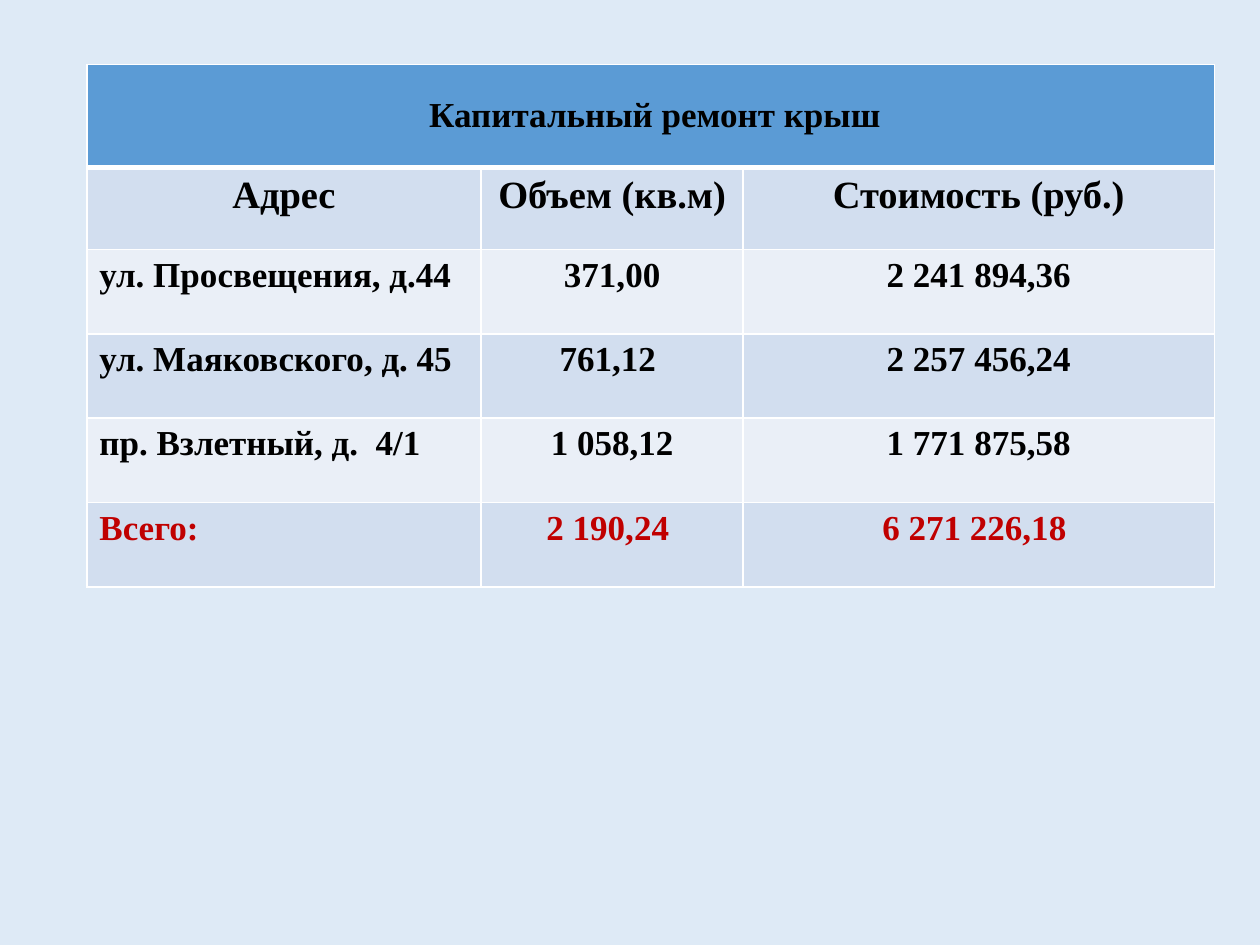
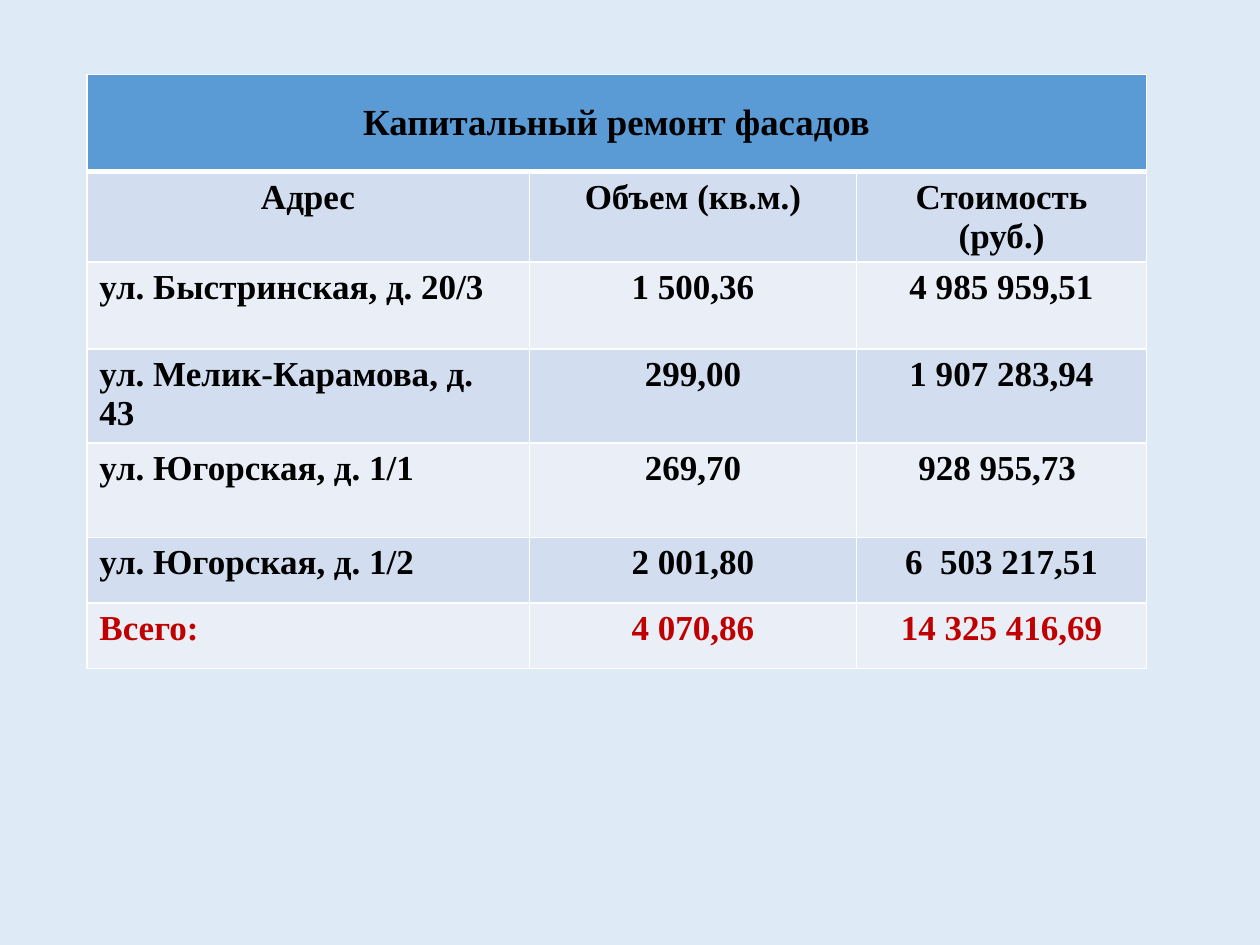
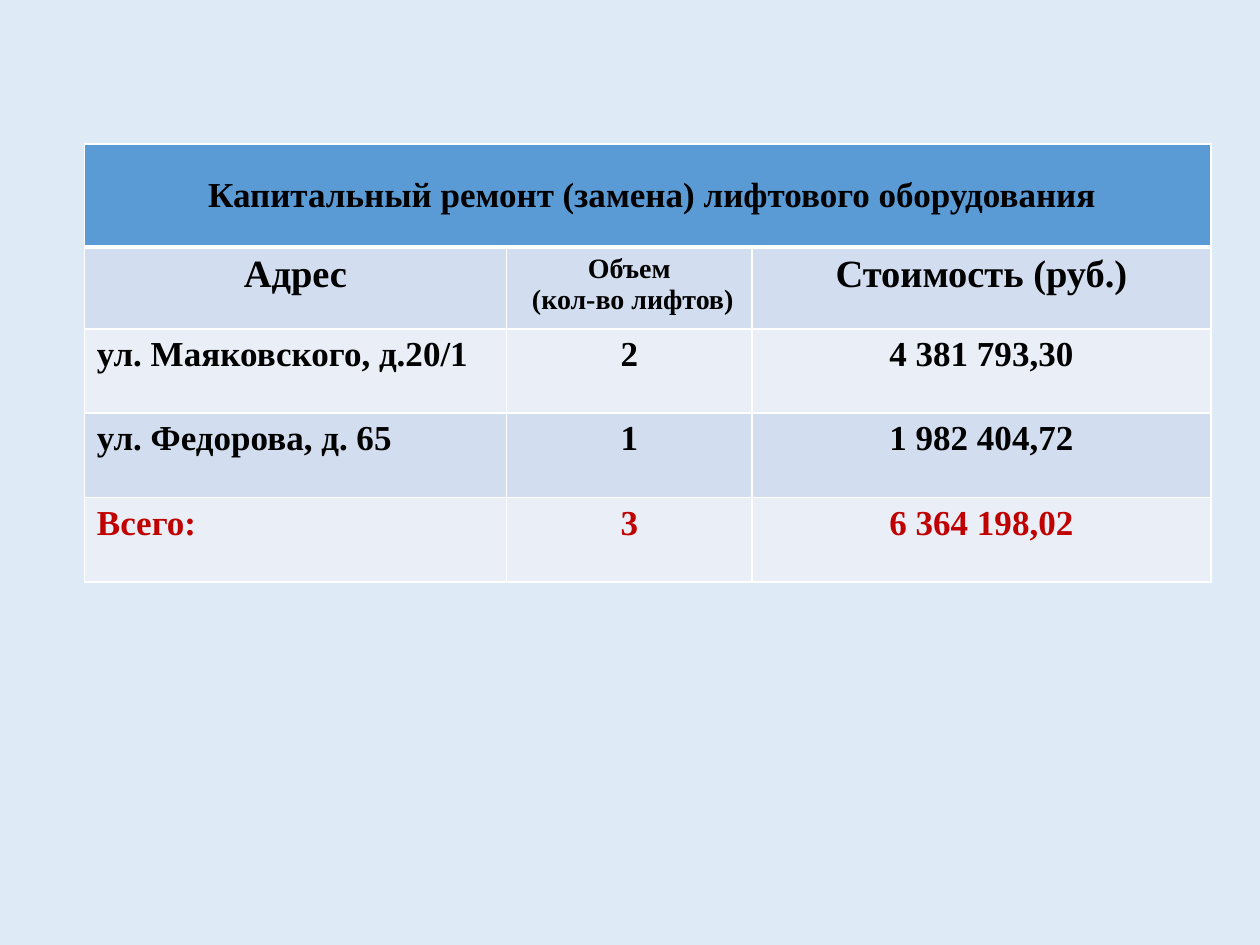
import pptx
import pptx.dml.color
import pptx.enum.text
import pptx.oxml
import pptx.oxml.ns
import pptx.util

Cm = pptx.util.Cm
Pt = pptx.util.Pt
RGB = pptx.dml.color.RGBColor.from_string
ALIGN = pptx.enum.text.PP_ALIGN
ANCHOR = pptx.enum.text.MSO_ANCHOR

FONT = "Times New Roman"
COLORS = {
    "page": "DEEAF6",
    "title": "5B9BD5",
    "band_dark": "D2DEEF",
    "band_light": "EAEFF7",
    "border": "FFFFFF",
    "text": "000000",
    "total": "C00000",
}


def set_borders(cell, top=1, bottom=1):
    """Draw the four cell borders, widths in points."""
    tcPr = cell._tc.get_or_add_tcPr()
    for side, width in (("L", 1), ("R", 1), ("T", top), ("B", bottom)):
        tcPr.append(pptx.oxml.parse_xml(
            f'<a:ln{side} {pptx.oxml.ns.nsdecls("a")} w="{Pt(width)}">'
            f'<a:solidFill><a:srgbClr val="{COLORS["border"]}"/></a:solidFill>'
            f'</a:ln{side}>'))


def set_text(cell, text, size, color="text", align=ALIGN.CENTER):
    tf = cell.text_frame
    tf.text = text
    for p in tf.paragraphs:
        p.alignment = align
        p.font.name = FONT
        p.font.size = Pt(size)
        p.font.bold = True
        p.font.color.rgb = RGB(COLORS[color])


def add_repair_table(s, left, top, col_widths, row_heights, title, title_size,
                     headings, heading_sizes, records):
    """Title row, heading row, then address records; the last one is the total."""
    table = s.shapes.add_table(
        len(row_heights), len(col_widths), Cm(left), Cm(top),
        Cm(sum(col_widths)), Cm(sum(row_heights))).table
    for column, width in zip(table.columns, col_widths):
        column.width = Cm(width)
    for row, height in zip(table.rows, row_heights):
        row.height = Cm(height)

    # Borders and banding
    for i, row in enumerate(table.rows):
        band = "title" if i == 0 else "band_dark" if i % 2 else "band_light"
        for cell in row.cells:
            set_borders(cell, top=3 if i == 1 else 1, bottom=3 if i == 0 else 1)
            cell.fill.solid()
            cell.fill.fore_color.rgb = RGB(COLORS[band])

    # Title across all columns
    title_cell = table.cell(0, 0)
    title_cell.merge(table.cell(0, len(col_widths) - 1))
    title_cell.vertical_anchor = ANCHOR.MIDDLE
    set_text(title_cell, title, title_size)

    # Column headings
    for j, (heading, size) in enumerate(zip(headings, heading_sizes)):
        set_text(table.cell(1, j), heading, size)

    # Records
    for i, record in enumerate(records, start=2):
        color = "total" if i == len(row_heights) - 1 else "text"
        for j, value in enumerate(record):
            set_text(table.cell(i, j), value, 20, color,
                     ALIGN.CENTER if j else ALIGN.LEFT)


TABLES = [
    dict(
        left=1.75, top=1.3,
        col_widths=[7.95, 5.28, 9.5],
        row_heights=[2.08, 1.65] + [1.7] * 4,
        title=" Капитальный ремонт крыш", title_size=20,
        headings=["Адрес", "Объем (кв.м)", "Стоимость (руб.)"],
        heading_sizes=[22, 22, 22],
        records=[
            ("ул. Просвещения, д.44", "371,00", "2 241 894,36"),
            ("ул. Маяковского, д. 45", "761,12 ", "2 257 456,24"),
            ("пр. Взлетный, д.  4/1", "1 058,12", "1 771 875,58"),
            ("Всего:", "2 190,24 ", "6 271 226,18 "),
        ]),
    dict(
        left=1.75, top=1.5,
        col_widths=[8.92, 6.6, 5.84],
        row_heights=[1.96, 1.79, 1.75, 1.9, 1.9, 1.32, 1.32],
        title="Капитальный ремонт фасадов", title_size=21,
        headings=["Адрес", "Объем (кв.м.)", "Стоимость (руб.)"],
        heading_sizes=[20, 20, 20],
        records=[
            ("ул. Быстринская, д. 20/3", "1 500,36", "4 985 959,51"),
            ("ул. Мелик-Карамова, д. 43", "299,00", "1 907 283,94"),
            ("ул. Югорская, д. 1/1", "269,70", "928 955,73 "),
            ("ул. Югорская, д. 1/2", "2 001,80", "6  503 217,51"),
            ("Всего:", "4 070,86", "14 325 416,69"),
        ]),
    dict(
        left=1.7, top=2.9,
        col_widths=[8.51, 4.95, 9.25],
        row_heights=[2.08, 1.65] + [1.7] * 3,
        title=" Капитальный ремонт (замена) лифтового оборудования", title_size=20,
        headings=["Адрес", "Объем\n (кол-во лифтов)", "Стоимость (руб.)"],
        heading_sizes=[22, 16, 22],
        records=[
            ("ул. Маяковского, д.20/1", "2", "4 381 793,30"),
            ("ул. Федорова, д. 65", "1", "1 982 404,72"),
            ("Всего:", "3", "6 364 198,02"),
        ]),
]


def main():
    prs = pptx.Presentation()
    prs.slide_width, prs.slide_height = Cm(25.4), Cm(19.05)
    for spec_table in TABLES:
        s = prs.slides.add_slide(prs.slide_layouts[6])
        s.background.fill.solid()
        s.background.fill.fore_color.rgb = RGB(COLORS["page"])
        add_repair_table(s, **spec_table)
    prs.save("out.pptx")


if __name__ == "__main__":
    main()
